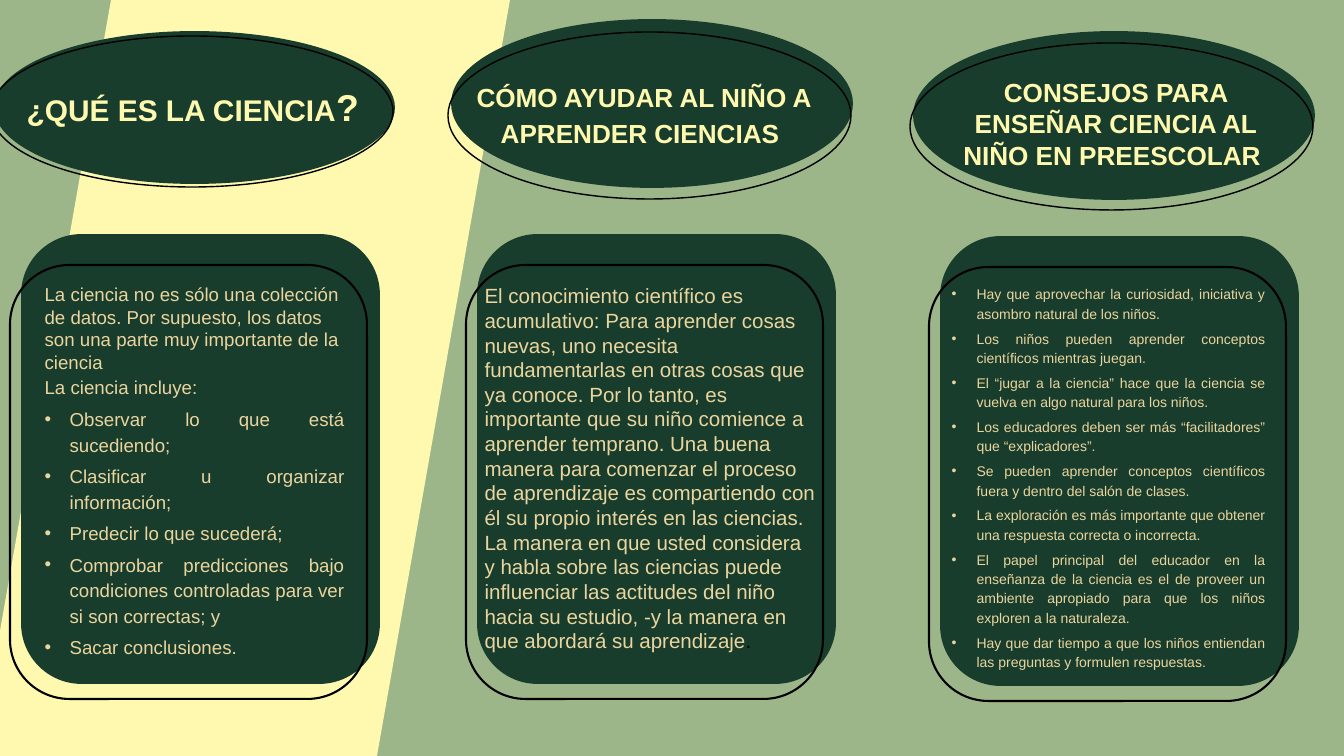
"""Build a three-column slide about science in preschool."""
from dataclasses import dataclass

from lxml.etree import SubElement
from pptx import Presentation
from pptx.dml.color import RGBColor
from pptx.enum.shapes import MSO_SHAPE
from pptx.enum.text import MSO_ANCHOR, PP_ALIGN
from pptx.oxml.ns import qn
from pptx.util import Pt

SCALE = 914400 / 67.2


@dataclass(frozen=True)
class Theme:
    font: str = "Arial"
    sage: str = "9DB689"
    cream: str = "FFF9B0"
    forest: str = "193D2D"
    sand: str = "EAD59E"
    black: str = "000000"
    heading: int = 28
    wide_heading: int = 32
    question_mark: int = 40
    intro: int = 20
    essay: int = 22
    advice: int = 15


THEME = Theme()
PLAIN, CENTERED, SPACED_CENTERED, JUSTIFIED, BULLET = range(5)

SCIENCE_INTRO = (
    "La ciencia no es sólo una colección de datos. Por supuesto, los datos "
    "son una parte muy importante de la ciencia"
)
SCIENCE_INCLUDES = [
    "Observar lo que está sucediendo;",
    "Clasificar u organizar información;",
    "Predecir lo que sucederá;",
    "Comprobar predicciones bajo condiciones controladas para ver si son correctas; y",
    "Sacar conclusiones.",
]
LEARNING_ESSAY = (
    "El conocimiento científico es acumulativo: Para aprender cosas nuevas, uno "
    "necesita fundamentarlas en otras cosas que ya conoce. Por lo tanto, es "
    "importante que su niño comience a aprender temprano. Una buena manera para "
    "comenzar el proceso de aprendizaje es compartiendo con él su propio interés "
    "en las ciencias. La manera en que usted considera y habla sobre las ciencias "
    "puede influenciar las actitudes del niño hacia su estudio, -y la manera en "
    "que abordará su aprendizaje"
)
TEACHING_ADVICE = [
    "Hay que aprovechar la curiosidad, iniciativa y asombro natural de los niños.",
    "Los niños pueden aprender conceptos científicos mientras juegan.",
    "El “jugar a la ciencia” hace que la ciencia se vuelva en algo natural para los niños.",
    "Los educadores deben ser más “facilitadores” que “explicadores”.",
    "Se pueden aprender conceptos científicos fuera y dentro del salón de clases.",
    "La exploración es más importante que obtener una respuesta correcta o incorrecta.",
    "El papel principal del educador en la enseñanza de la ciencia es el de proveer "
    "un ambiente apropiado para que los niños exploren a la naturaleza.",
    "Hay que dar tiempo a que los niños entiendan las preguntas y formulen respuestas.",
]

COLUMNS = [
    {
        "oval": (-5, 32, 399, 151), "oval_drop": 4, "card": (22, 235),
        "heading_box": (20, 81, 450, 52), "body_box": (38, 280, 313, 412),
        "heading": [(PLAIN, [("¿QUÉ ES LA CIENCIA", THEME.wide_heading, THEME.cream),
                             ("?", THEME.question_mark, THEME.cream)])],
        "body": [(PLAIN, [(SCIENCE_INTRO, THEME.intro, THEME.sand)]),
                 (JUSTIFIED, [("La ciencia incluye:", THEME.intro, THEME.sand)])]
        + [(BULLET, [(item, THEME.intro, THEME.sand)]) for item in SCIENCE_INCLUDES],
    },
    {
        "oval": (452, 20, 400, 167), "oval_drop": 12, "card": (478, 235),
        "heading_box": (465, 73, 357, 77), "body_box": (478, 280, 345, 380),
        "heading": [(SPACED_CENTERED, [("CÓMO AYUDAR AL NIÑO A APRENDER CIENCIAS ",
                                        THEME.heading, THEME.cream)])],
        "body": [(PLAIN, [(LEARNING_ESSAY, THEME.essay, THEME.sand),
                          (".", THEME.essay, THEME.black)])],
    },
    {
        "oval": (914, 32, 400, 167), "oval_drop": 11, "card": (941, 237),
        "heading_box": (945, 73, 341, 122), "body_box": (945, 280, 327, 423),
        "heading": [(CENTERED, [("CONSEJOS PARA ENSEÑAR CIENCIA AL NIÑO EN PREESCOLAR ",
                                 THEME.heading, THEME.cream)])],
        "body": [(BULLET, [(item, THEME.advice, THEME.sand)]) for item in TEACHING_ADVICE],
    },
]
CARD_WIDTH, CARD_HEIGHT, OUTLINE_HEIGHT = 357, 448, 434
BULLET_INDENT = 25
ALIGNMENT = {
    PLAIN: PP_ALIGN.LEFT, CENTERED: PP_ALIGN.CENTER, SPACED_CENTERED: PP_ALIGN.CENTER,
    JUSTIFIED: PP_ALIGN.JUSTIFY, BULLET: PP_ALIGN.JUSTIFY,
}


def px(value):
    return round(value * SCALE)


def color(name):
    return RGBColor.from_string(name)


def add_figure(shapes, kind, bounds, fill=None, line=None, weight=0):
    figure = shapes.add_shape(kind, *map(px, bounds))
    figure.shadow.inherit = False
    if fill:
        figure.fill.solid()
        figure.fill.fore_color.rgb = color(fill)
    else:
        figure.fill.background()
    if line:
        figure.line.color.rgb = color(line)
        figure.line.width = Pt(weight)
    else:
        figure.line.fill.background()


def add_offset_pair(page, kind, solid, outline, weight):
    pair = page.shapes.add_group_shape()
    add_figure(pair.shapes, kind, solid, THEME.forest, THEME.forest, 2)
    add_figure(pair.shapes, kind, outline, None, THEME.black, weight)


def add_bullet(para):
    properties = para._p.get_or_add_pPr()
    properties.set("marL", str(px(BULLET_INDENT)))
    properties.set("indent", str(-px(BULLET_INDENT)))
    SubElement(properties, qn("a:buFont")).set("typeface", THEME.font)
    SubElement(properties, qn("a:buChar")).set("char", "•")


def add_text(page, bounds, paragraphs, bold=False):
    box = page.shapes.add_textbox(*map(px, bounds))
    frame = box.text_frame
    frame.word_wrap = True
    frame.vertical_anchor = MSO_ANCHOR.TOP
    for index, (style, spans) in enumerate(paragraphs):
        para = frame.add_paragraph() if index else frame.paragraphs[0]
        para.alignment = ALIGNMENT[style]
        if style in (SPACED_CENTERED, JUSTIFIED, BULLET):
            para.line_spacing = 1.15
            para.space_after = Pt(6)
        if style == BULLET:
            add_bullet(para)
        for text, size, ink in spans:
            span = para.add_run()
            span.text = text
            span.font.name = THEME.font
            span.font.size = Pt(size)
            span.font.bold = bold
            span.font.color.rgb = color(ink)


def add_column(page, column):
    left, top, width, height = column["oval"]
    oval_outline = (left - 4, top + column["oval_drop"], width + 3, height)
    add_offset_pair(page, MSO_SHAPE.OVAL, column["oval"], oval_outline, 1.5)
    left, top = column["card"]
    card = (left, top, CARD_WIDTH, CARD_HEIGHT)
    card_outline = (left - 12, top + 30, CARD_WIDTH, OUTLINE_HEIGHT)
    add_offset_pair(page, MSO_SHAPE.ROUNDED_RECTANGLE, card, card_outline, 2.25)
    add_text(page, column["heading_box"], column["heading"], bold=True)
    add_text(page, column["body_box"], column["body"])


def main():
    deck = Presentation()
    deck.slide_width, deck.slide_height = px(1344), px(756)
    page = deck.slides.add_slide(deck.slide_layouts[6])
    page.background.fill.solid()
    page.background.fill.fore_color.rgb = color(THEME.sage)
    add_figure(page.shapes, MSO_SHAPE.PARALLELOGRAM, (-22, 0, 532, 756), THEME.cream)
    for column in COLUMNS:
        add_column(page, column)
    deck.save("out.pptx")


if __name__ == "__main__":
    main()
